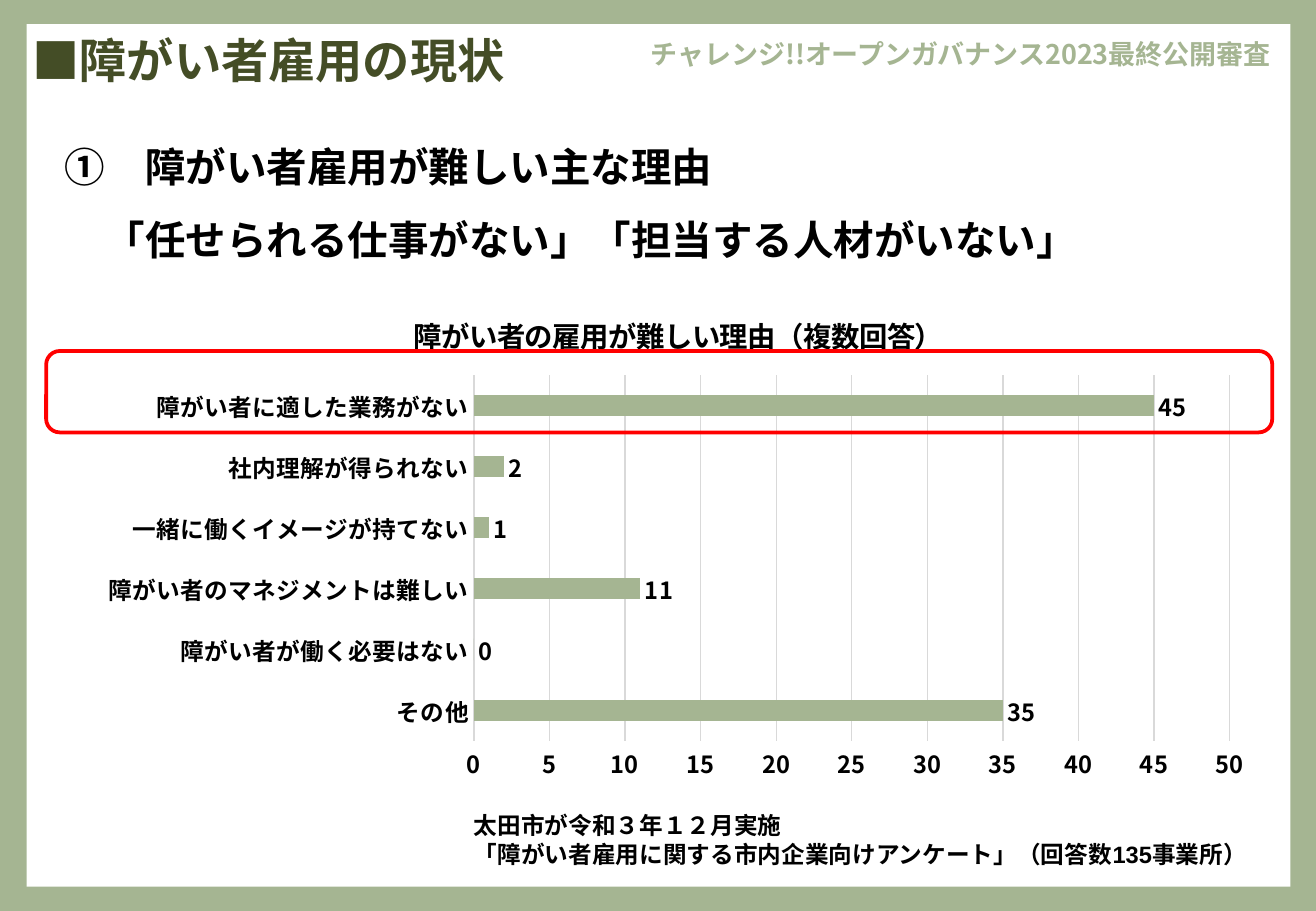
from dataclasses import dataclass
from typing import Optional

from lxml.etree import SubElement
from pptx import Presentation
from pptx.chart.data import CategoryChartData
from pptx.dml.color import RGBColor
from pptx.enum.chart import XL_CHART_TYPE, XL_LABEL_POSITION, XL_TICK_MARK
from pptx.enum.shapes import MSO_SHAPE
from pptx.enum.text import MSO_AUTO_SIZE, PP_ALIGN
from pptx.oxml import parse_xml
from pptx.oxml.ns import nsdecls, qn
from pptx.util import Pt

PX = 9144  # 100 px to the inch


@dataclass(frozen=True)
class Theme:
    sage: str = "A5B592"
    olive: str = "444D26"
    black: str = "000000"
    white: str = "FFFFFF"
    red: str = "FF0000"
    grid: str = "D9D9D9"
    face: str = "Noto Sans CJK JP"
    note_face: str = "Arial"
    head: float = 28
    lead: float = 24
    title: float = 16.8
    sub: float = 16
    small: float = 14


THEME = Theme()


@dataclass(frozen=True)
class Box:
    x: int
    y: int
    w: int
    h: int

    def emu(self) -> tuple[int, int, int, int]:
        return self.x * PX, self.y * PX, self.w * PX, self.h * PX


@dataclass(frozen=True)
class Label:
    box: Box
    lines: tuple[str, ...]
    size: float
    color: str = THEME.black
    face: str = THEME.face
    space: Optional[float] = None
    align: Optional[PP_ALIGN] = None


@dataclass(frozen=True)
class Frame:
    box: Box
    kind: MSO_SHAPE
    fill: Optional[str] = None
    line: Optional[str] = None


PANEL = Frame(Box(22, 20, 1040, 710), MSO_SHAPE.RECTANGLE, fill=THEME.white)
MARK = Frame(Box(38, 289, 1009, 67), MSO_SHAPE.ROUNDED_RECTANGLE, line=THEME.red)

LABELS = (
    Label(Box(43, 92, 917, 122),
          ("①　障がい者雇用が難しい主な理由",
           "　「任せられる仕事がない」「担当する人材がいない」"),
          THEME.lead, space=1.5),
    Label(Box(17, 21, 442, 57), ("■障がい者雇用の現状",), THEME.head, THEME.olive),
    Label(Box(380, 663, 688, 57),
          ("太田市が令和３年１２月実施",
           "「障がい者雇用に関する市内企業向けアンケート」（回答数135事業所）"),
          THEME.small, face=THEME.note_face),
    Label(Box(506, 13, 569, 44),
          ("チャレンジ!!オープンガバナンス2023最終公開審査",),
          THEME.sub, THEME.sage, space=1.5, align=PP_ALIGN.CENTER),
)

CHART = Box(70, 240, 974, 410)
PLOT = Box(390, 309, 622, 301)
TITLE = Box(336, 252, 0, 0)
REASONS = {
    "その他": 35,
    "障がい者が働く必要はない": 0,
    "障がい者のマネジメントは難しい": 11,
    "一緒に働くイメージが持てない": 1,
    "社内理解が得られない": 2,
    "障がい者に適した業務がない": 45,
}


def rgb(color: str) -> RGBColor:
    return RGBColor.from_string(color)


def style(font, size: float, color: str = THEME.black, face: str = THEME.face) -> None:
    """Set a bold font, with its East Asian face as well."""
    font.size, font.bold, font.name = Pt(size), True, face
    font.color.rgb = rgb(color)
    latin = font._element.find(qn("a:latin"))
    latin.addnext(parse_xml(f'<a:ea {nsdecls("a")} typeface="{THEME.face}"/>'))


def add_frame(slide, frame: Frame) -> None:
    shape = slide.shapes.add_shape(frame.kind, *frame.box.emu())
    shape.shadow.inherit = False
    if frame.fill:
        shape.fill.solid()
        shape.fill.fore_color.rgb = rgb(frame.fill)
    else:
        shape.fill.background()
    if frame.line:
        shape.line.color.rgb = rgb(frame.line)
        shape.line.width = Pt(2.25)
    else:
        shape.line.fill.background()


def add_label(slide, label: Label) -> None:
    text = slide.shapes.add_textbox(*label.box.emu()).text_frame
    text.word_wrap = True
    text.auto_size = MSO_AUTO_SIZE.SHAPE_TO_FIT_TEXT
    text.text = "\n".join(label.lines)
    for para in text.paragraphs:
        style(para.font, label.size, label.color, label.face)
        para.line_spacing = label.space
        para.alignment = label.align


def place(part, index: int, box: Box, inner: bool = False) -> None:
    """Pin a chart part to a box given in slide px."""
    for old in part.findall(qn("c:layout")):
        part.remove(old)
    layout = parse_xml(f'<c:layout {nsdecls("c")}><c:manualLayout/></c:layout>')
    items = {"layoutTarget": "inner"} if inner else {}
    items |= {"xMode": "edge", "yMode": "edge",
              "x": (box.x - CHART.x) / CHART.w, "y": (box.y - CHART.y) / CHART.h}
    if inner:
        items |= {"w": box.w / CHART.w, "h": box.h / CHART.h}
    for name, value in items.items():
        SubElement(layout[0], qn(f"c:{name}")).set("val", str(value))
    part.insert(index, layout)


def add_bars(slide) -> None:
    data = CategoryChartData()
    data.categories = list(REASONS)
    data.add_series("回答数", list(REASONS.values()))
    chart = slide.shapes.add_chart(
        XL_CHART_TYPE.BAR_CLUSTERED, *CHART.emu(), data).chart
    chart.has_legend = False
    style(chart.font, THEME.small)

    title = chart.chart_title
    title.text_frame.text = "障がい者の雇用が難しい理由（複数回答）"
    style(title.text_frame.paragraphs[0].font, THEME.title)
    place(chart.element.find(f".//{qn('c:title')}"), 1, TITLE)
    place(chart.element.find(f".//{qn('c:plotArea')}"), 0, PLOT, inner=True)

    plot = chart.plots[0]
    plot.gap_width = 182
    plot.vary_by_categories = False
    fill = plot.series[0].format.fill
    fill.solid()
    fill.fore_color.rgb = rgb(THEME.sage)
    plot.has_data_labels = True
    labels = plot.data_labels
    labels.show_value = True
    labels.position = XL_LABEL_POSITION.OUTSIDE_END
    style(labels.font, THEME.small)

    cats, vals = chart.category_axis, chart.value_axis
    vals.minimum_scale, vals.maximum_scale, vals.major_unit = 0, 50, 5
    for axis in (cats, vals):
        axis.major_tick_mark = axis.minor_tick_mark = XL_TICK_MARK.NONE
        style(axis.tick_labels.font, THEME.small)
    vals.format.line.fill.background()
    for line in (cats.format.line, vals.major_gridlines.format.line):
        line.color.rgb = rgb(THEME.grid)
        line.width = Pt(0.75)


def main() -> None:
    deck = Presentation()
    deck.slide_width, deck.slide_height = 1083 * PX, 750 * PX
    slide = deck.slides.add_slide(deck.slide_layouts[6])
    slide.background.fill.solid()
    slide.background.fill.fore_color.rgb = rgb(THEME.sage)
    add_frame(slide, PANEL)
    add_bars(slide)
    for label in LABELS:
        add_label(slide, label)
    add_frame(slide, MARK)
    deck.save("out.pptx")


if __name__ == "__main__":
    main()
